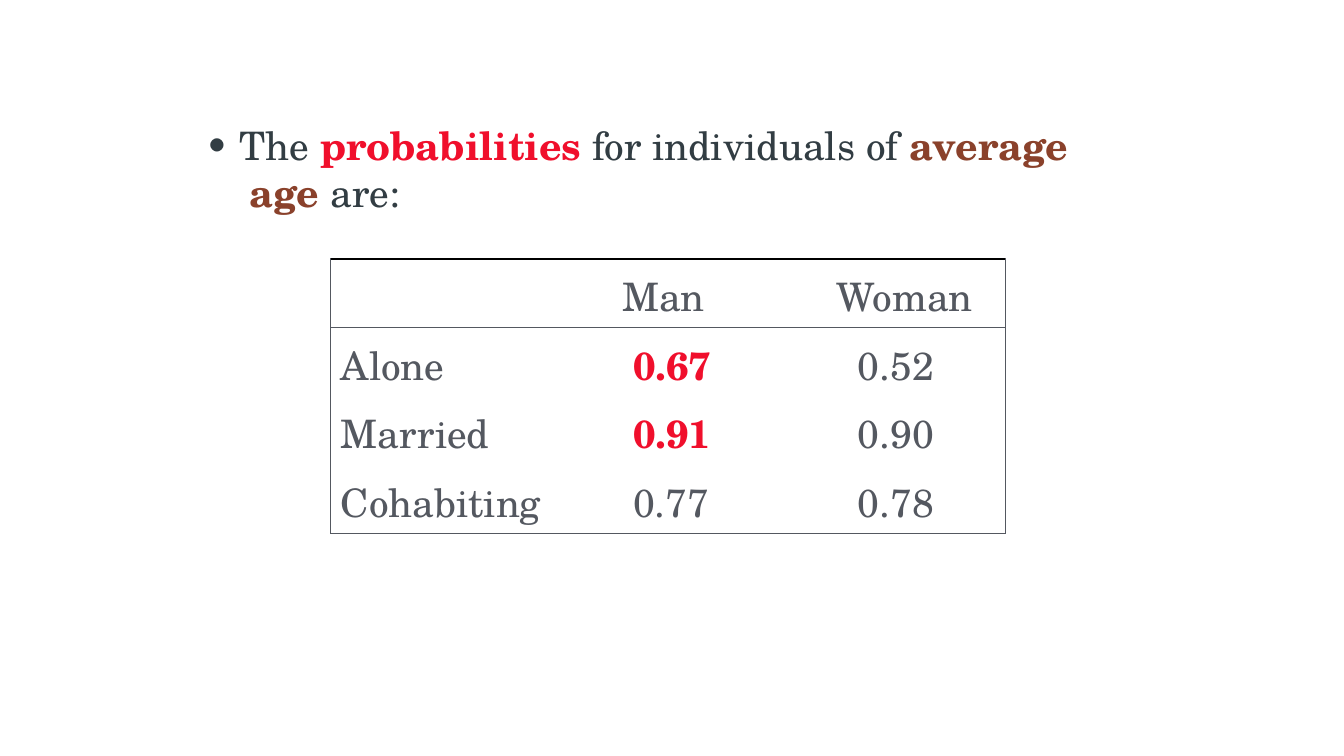
from dataclasses import dataclass

import pptx
import pptx.dml.color
import pptx.enum.text
import pptx.oxml.ns
import pptx.util
from lxml import etree
from pptx.util import Inches

FONT = "TeX Gyre Schola"
HUES = {"ink": "323D43", "gray": "545860", "red": "F00F2C",
        "brown": "8A412B", "black": "000000"}
SIDES = {"left": "a:lnL", "right": "a:lnR", "top": "a:lnT", "bottom": "a:lnB"}


@dataclass
class Entry:
    text: str
    inset: float = 0
    hot: bool = False


HEAD = [Entry(""), Entry("Man", 0.1), Entry("Woman")]
ROWS = [
    HEAD,
    [Entry("Alone"), Entry("0.67", 0.21, True), Entry("0.52", 0.21)],
    [Entry("Married"), Entry("0.91", 0.21, True), Entry("0.90", 0.21)],
    [Entry("Cohabiting"), Entry("0.77", 0.21), Entry("0.78", 0.21)],
]
WIDTHS = [2.69, 2.23, 1.77]
HEIGHT = 0.68


def color(name: str) -> pptx.dml.color.RGBColor:
    return pptx.dml.color.RGBColor.from_string(HUES[name])


def write(para, text: str, *, hue: str = "gray", bold: bool = False) -> None:
    run = para.add_run()
    run.text = text
    run.font.name = FONT
    run.font.size = pptx.util.Pt(28)
    run.font.bold = bold
    run.font.color.rgb = color(hue)


def indent(para, left: float, bullet: str = "") -> None:
    props = para._p.get_or_add_pPr()
    props.set("marL", str(Inches(left)))
    props.set("indent", str(-Inches(left) if bullet else 0))
    if bullet:
        tint = etree.SubElement(props, pptx.oxml.ns.qn("a:buClr"))
        etree.SubElement(tint, pptx.oxml.ns.qn("a:srgbClr"), val=HUES["ink"])
        face = etree.SubElement(props, pptx.oxml.ns.qn("a:buFont"))
        face.set("typeface", FONT)
        etree.SubElement(props, pptx.oxml.ns.qn("a:buChar"), char=bullet)


def border(cell, edges: dict[str, str]) -> None:
    props = cell._tc.get_or_add_tcPr()
    for spot, (side, tag) in enumerate(SIDES.items()):
        line = etree.Element(pptx.oxml.ns.qn(tag), w=str(pptx.util.Pt(1)))
        if side in edges:
            fill = etree.SubElement(line, pptx.oxml.ns.qn("a:solidFill"))
            etree.SubElement(fill, pptx.oxml.ns.qn("a:srgbClr"),
                             val=HUES[edges[side]])
        else:
            etree.SubElement(line, pptx.oxml.ns.qn("a:noFill"))
        props.insert(spot, line)


def edges(row: int, col: int) -> dict[str, str]:
    found = {}
    if row < 2:
        found["top"] = "gray" if row else "black"
    if row in (0, len(ROWS) - 1):
        found["bottom"] = "gray"
    if col == 0:
        found["left"] = "gray"
    if col == len(WIDTHS) - 1:
        found["right"] = "gray"
    return found


def intro(slide) -> None:
    box = slide.shapes.add_textbox(Inches(1.94), Inches(1.15),
                                   Inches(9.14), Inches(0.98))
    frame = box.text_frame
    frame.word_wrap = True
    frame.margin_bottom = 0
    first = frame.paragraphs[0]
    indent(first, 0.34, "•")
    write(first, "The ", hue="ink")
    write(first, "probabilities", hue="red", bold=True)
    write(first, " for individuals of ", hue="ink")
    write(first, "average", hue="brown", bold=True)
    second = frame.add_paragraph()
    indent(second, 0.44)
    write(second, "age", hue="brown", bold=True)
    write(second, " are:", hue="ink")


def grid(slide) -> None:
    table = slide.shapes.add_table(
        len(ROWS), len(WIDTHS), Inches(3.28), Inches(2.57),
        Inches(sum(WIDTHS)), Inches(HEIGHT * len(ROWS))).table
    table.first_row = table.horz_banding = False
    for col, width in enumerate(WIDTHS):
        table.columns[col].width = Inches(width)
    for row, items in enumerate(ROWS):
        table.rows[row].height = Inches(HEIGHT)
        for col, item in enumerate(items):
            cell = table.cell(row, col)
            cell.fill.background()
            cell.margin_bottom = 0
            cell.vertical_anchor = pptx.enum.text.MSO_ANCHOR.MIDDLE
            border(cell, edges(row, col))
            para = cell.text_frame.paragraphs[0]
            indent(para, item.inset)
            if item.text:
                write(para, item.text, hue="red" if item.hot else "gray",
                      bold=item.hot)


def main() -> None:
    deck = pptx.Presentation()
    deck.slide_width, deck.slide_height = Inches(13.33), Inches(7.5)
    slide = deck.slides.add_slide(deck.slide_layouts[6])
    intro(slide)
    grid(slide)
    deck.save("out.pptx")


if __name__ == "__main__":
    main()
